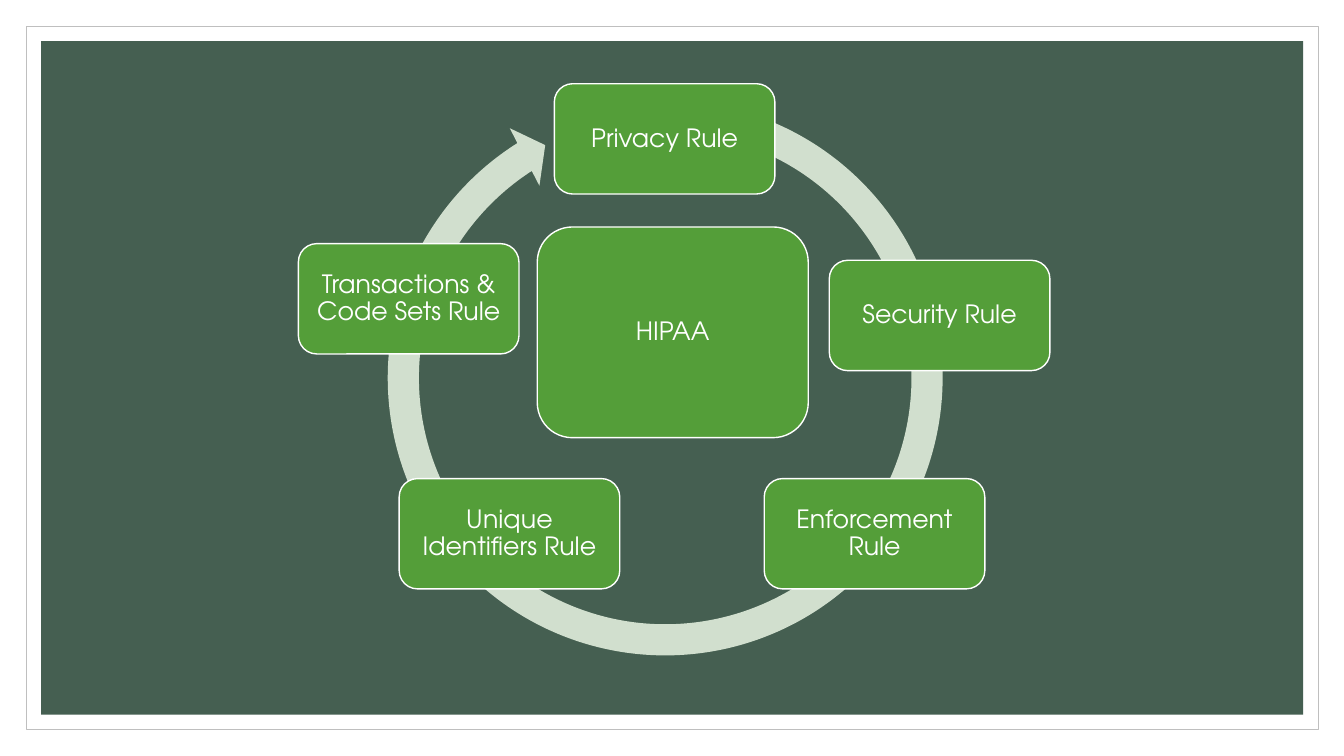
from pptx import Presentation
from pptx.dml.color import RGBColor
from pptx.enum.shapes import MSO_SHAPE as Preset
from pptx.enum.text import MSO_ANCHOR as Anchor, PP_ALIGN as Align
from pptx.util import Cm, Pt

FONT = "TeX Gyre Adventor"
WHITE, GREY = "FFFFFF", "BFBFBF"
DARK_GREEN, GREEN, PALE_GREEN = "455F51", "549E39", "D1DFCE"
RULE_SIZE = (5.56, 2.78)
RULES = [
    ("Privacy Rule", 13.97, 2.11),
    ("Security Rule", 20.9, 6.56),
    ("Enforcement Rule", 19.26, 12.06),
    ("Unique Identifiers Rule", 10.06, 12.06),
    ("Transactions & Code Sets Rule", 7.52, 6.14),
]


def color(hex_string):
    return RGBColor.from_string(hex_string)


def add_preset(page, preset, left, top, width, height, fill, line=None, line_width=1):
    """Add a flat shape, measured in centimetres."""
    shape = page.shapes.add_shape(preset, Cm(left), Cm(top), Cm(width), Cm(height))
    shape.shadow.inherit = False
    shape.fill.solid()
    shape.fill.fore_color.rgb = color(fill)
    if line:
        shape.line.color.rgb = color(line)
        shape.line.width = Pt(line_width)
    else:
        shape.line.fill.background()
    return shape


def write(shape, text, size=18, ink=WHITE, align=Align.CENTER, inset=0.32):
    frame = shape.text_frame
    frame.word_wrap = True
    frame.vertical_anchor = Anchor.MIDDLE
    frame.margin_left = frame.margin_right = Cm(inset)
    frame.margin_top = frame.margin_bottom = Cm(inset)
    para = frame.paragraphs[0]
    para.alignment = align
    para.line_spacing = 0.9
    para.space_after = Pt(size * 0.35)
    span = para.add_run()
    span.text = text
    span.font.name = FONT
    span.font.size = Pt(size)
    span.font.color.rgb = color(ink)


def add_card(page, text, left, top, width, height):
    box = add_preset(page, Preset.ROUNDED_RECTANGLE, left, top, width, height, GREEN, WHITE)
    write(box, text)


def add_cycle_arrow(page):
    ring = add_preset(page, Preset.CIRCULAR_ARROW, 9.35, 2.11, 14.83, 14.83, PALE_GREEN)
    # Thickness, head angle, end angle, start angle, head width
    for index, value in enumerate((0.053, 3.126, 142.516, 171.133, 0.055)):
        ring.adjustments[index] = value


def main():
    deck = Presentation()
    deck.slide_width, deck.slide_height = Cm(33.87), Cm(19.05)
    page = deck.slides.add_slide(deck.slide_layouts[6])
    add_preset(page, Preset.RECTANGLE, 0.66, 0.66, 32.56, 17.73, WHITE, GREY, 0.5)
    add_preset(page, Preset.RECTANGLE, 1.04, 1.04, 31.8, 16.97, DARK_GREEN)
    add_cycle_arrow(page)
    for text, left, top in RULES:
        add_card(page, text, left, top, *RULE_SIZE)
    add_card(page, "HIPAA", 13.54, 5.72, 6.83, 5.31)
    deck.save("out.pptx")


if __name__ == "__main__":
    main()
